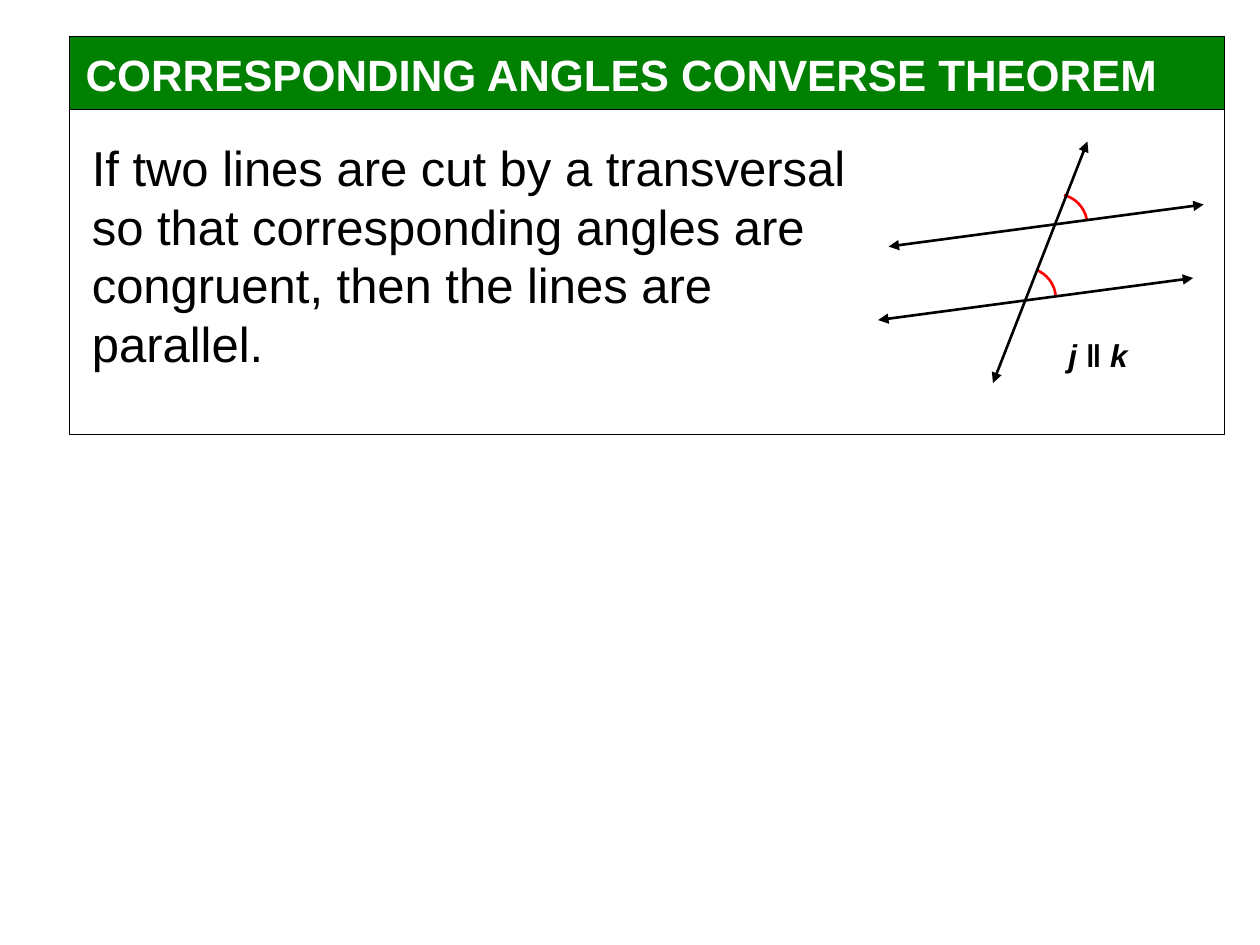
from dataclasses import dataclass

from lxml import etree
from pptx import Presentation
from pptx import util as u
from pptx.dml.color import RGBColor
from pptx.enum import shapes, text
from pptx.oxml.ns import qn

COLORS = {"green": "008000", "white": "FFFFFF", "black": "000000", "red": "FF0000"}
FONT = "Arial"
PANEL_LEFT, PANEL_WIDTH = 39.6, 660
ARC_SIZE = 36


@dataclass
class Panel:
    top: float
    height: float
    fill: str | None = None


@dataclass
class Label:
    x: float
    y: float
    w: float
    h: float
    words: str
    size: float
    color: str = "black"
    bold: bool = False
    italic: bool = False
    wrap: bool = True


@dataclass
class Line:
    x1: float
    y1: float
    x2: float
    y2: float


@dataclass
class AngleMark:
    x: float
    y: float
    start: float
    end: float


PANELS = [Panel(20.9, 41.8, "green"), Panel(62.7, 185.8)]
LABELS = [
    Label(41.8, 23.8, 660, 37.4, "CORRESPONDING ANGLES CONVERSE THEOREM", 25,
          color="white", bold=True),
    Label(45.4, 74.9, 468, 141.8,
          "If two lines are cut by a transversal so that corresponding angles "
          "are congruent, then the lines are parallel.", 28),
    Label(603.4, 188.6, 59.8, 36.7, "j ‖ k", 18, bold=True, italic=True, wrap=False),
]
LINES = [
    Line(501.8, 182.9, 681.8, 158.9),
    Line(507.8, 140.9, 687.8, 116.9),
    Line(567.4, 218.9, 621.4, 80.9),
]
ANGLE_MARKS = [AngleMark(585.4, 110.9, 285, 350), AngleMark(567.4, 152.9, 294, 355)]


def rgb(name: str) -> RGBColor:
    return RGBColor.from_string(COLORS[name])


def style_line(sp, color: str, width: float) -> None:
    sp.line.color.rgb = rgb(color)
    sp.line.width = u.Pt(width)


def add_panel(s, panel: Panel) -> None:
    sp = s.shapes.add_shape(shapes.MSO_SHAPE.RECTANGLE, u.Pt(PANEL_LEFT), u.Pt(panel.top),
                            u.Pt(PANEL_WIDTH), u.Pt(panel.height))
    sp.shadow.inherit = False
    if panel.fill:
        sp.fill.solid()
        sp.fill.fore_color.rgb = rgb(panel.fill)
    else:
        sp.fill.background()
    style_line(sp, "black", 0.75)


def add_label(s, label: Label) -> None:
    sp = s.shapes.add_textbox(u.Pt(label.x), u.Pt(label.y), u.Pt(label.w), u.Pt(label.h))
    tf = sp.text_frame
    tf.word_wrap = label.wrap
    tf.auto_size = text.MSO_AUTO_SIZE.SHAPE_TO_FIT_TEXT
    r = tf.paragraphs[0].add_run()
    r.text = label.words
    r.font.name = FONT
    r.font.size = u.Pt(label.size)
    r.font.bold = label.bold
    r.font.italic = label.italic
    r.font.color.rgb = rgb(label.color)


def add_angle_mark(s, mark: AngleMark) -> None:
    """Draw an arc clockwise between two angles in degrees."""
    sp = s.shapes.add_shape(shapes.MSO_SHAPE.ARC, u.Pt(mark.x), u.Pt(mark.y),
                            u.Pt(ARC_SIZE), u.Pt(ARC_SIZE))
    sp.shadow.inherit = False
    sp.fill.background()
    # Adjustments count in 100000ths, angles in 60000ths of a degree.
    sp.adjustments[0] = mark.start * 0.6
    sp.adjustments[1] = mark.end * 0.6
    style_line(sp, "red", 1.5)


def add_double_arrow(s, line: Line) -> None:
    sp = s.shapes.add_connector(shapes.MSO_CONNECTOR.STRAIGHT, u.Pt(line.x1), u.Pt(line.y1),
                                u.Pt(line.x2), u.Pt(line.y2))
    style_line(sp, "black", 1.5)
    ln = sp.line._get_or_add_ln()
    for end in ("a:headEnd", "a:tailEnd"):
        etree.SubElement(ln, qn(end), type="triangle")
    etree.SubElement(sp._element.spPr, qn("a:effectLst"))


def main() -> None:
    prs = Presentation()
    prs.slide_width, prs.slide_height = u.Pt(720), u.Pt(540)
    s = prs.slides.add_slide(prs.slide_layouts[6])
    for panel in PANELS:
        add_panel(s, panel)
    for mark in ANGLE_MARKS:
        add_angle_mark(s, mark)
    for line in LINES:
        add_double_arrow(s, line)
    for label in LABELS:
        add_label(s, label)
    prs.save("out.pptx")


if __name__ == "__main__":
    main()
